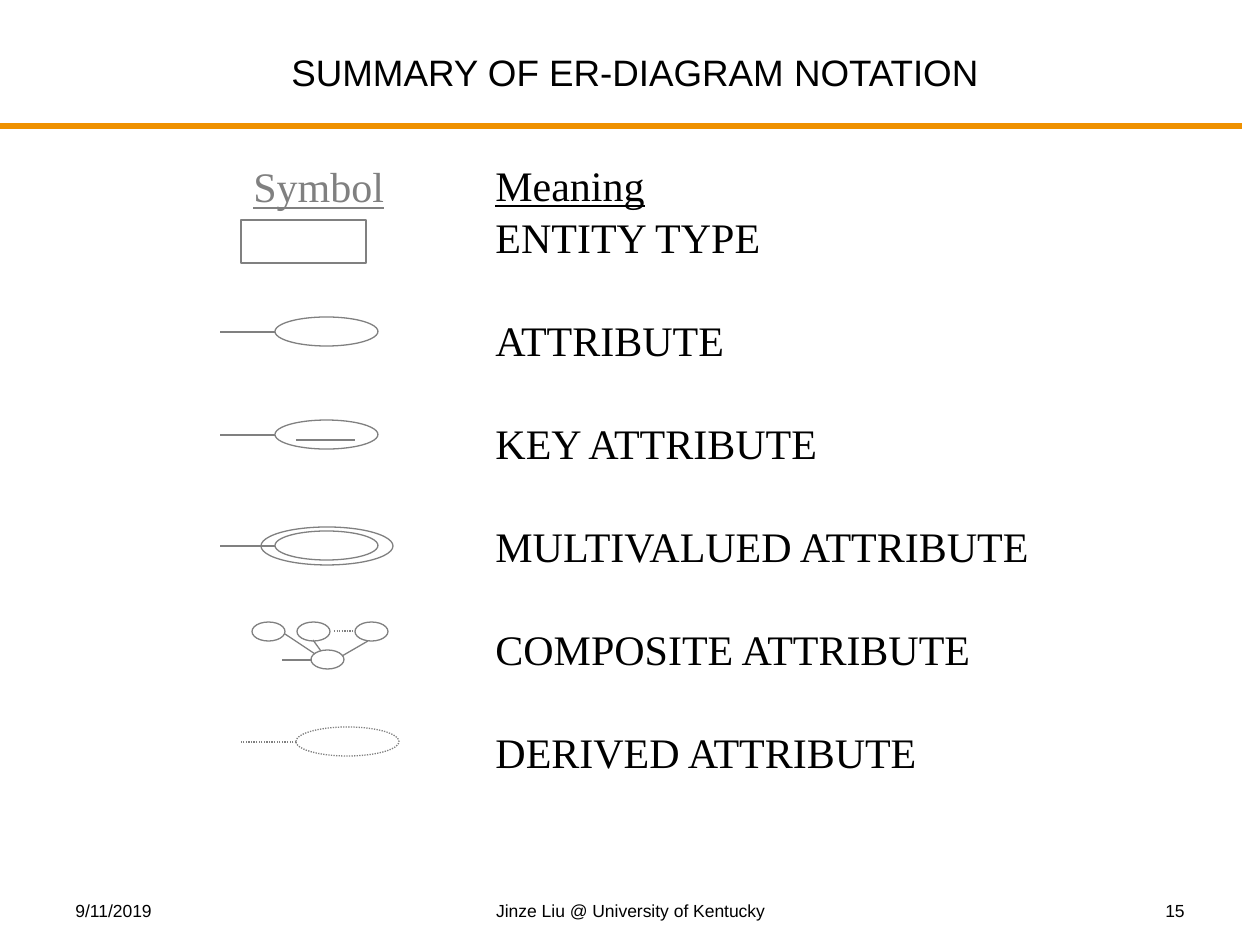
from dataclasses import dataclass

from lxml.etree import SubElement
from pptx import Presentation
from pptx.dml.color import RGBColor
from pptx.enum.dml import MSO_LINE
from pptx.enum.shapes import MSO_CONNECTOR, MSO_SHAPE
from pptx.enum.text import MSO_ANCHOR, MSO_AUTO_SIZE, PP_ALIGN
from pptx.oxml.ns import qn
from pptx.util import Pt

EMU_PER_PX = 914400 / 126
COLORS = {"text": "000000", "symbol": "808080", "rule": "EF9100"}
SANS, SERIF = "Arial", "Times New Roman"
OVAL_W, OVAL_H, STEM = 103, 29, 55
SMALL_W, SMALL_H = 33, 19


@dataclass
class Oval:
    left: int
    top: int
    width: int = OVAL_W
    height: int = OVAL_H
    dotted: bool = False


@dataclass
class Line:
    x1: int
    y1: int
    x2: int
    y2: int
    dotted: bool = False


@dataclass
class Label:
    text: str
    left: int
    top: int
    width: int
    height: int
    align: PP_ALIGN


def px(value: int) -> int:
    return round(value * EMU_PER_PX)


def rgb(name: str) -> RGBColor:
    return RGBColor.from_string(COLORS[name])


def style_line(line, color: str = "symbol", width: float = 0.75, dotted: bool = False) -> None:
    line.color.rgb = rgb(color)
    line.width = Pt(width)
    if dotted:
        line.dash_style = MSO_LINE.ROUND_DOT


def draw_outline(shapes, kind: MSO_SHAPE, o: Oval) -> None:
    s = shapes.add_shape(kind, px(o.left), px(o.top), px(o.width), px(o.height))
    s.shadow.inherit = False
    s.fill.background()
    style_line(s.line, dotted=o.dotted)


def draw_line(shapes, ln: Line, color: str = "symbol", width: float = 0.75) -> None:
    s = shapes.add_connector(MSO_CONNECTOR.STRAIGHT, px(ln.x1), px(ln.y1), px(ln.x2), px(ln.y2))
    style_line(s.line, color, width, ln.dotted)
    SubElement(s._element.spPr, qn("a:effectLst"))


def draw_symbol(shapes, parts: list) -> None:
    group = shapes.add_group_shape()
    for part in parts:
        if isinstance(part, Oval):
            draw_outline(group.shapes, MSO_SHAPE.OVAL, part)
        else:
            draw_line(group.shapes, part)


def attribute(left: int, top: int, dotted: bool = False) -> list:
    """An oval with a stem leaving its left side."""
    y = top + OVAL_H // 2 + 1
    return [Oval(left, top, dotted=dotted), Line(left, y, left - STEM, y, dotted)]


def format_paragraph(p, font: str, size: float, color: str = "text", underline: bool = False) -> None:
    for r in p.runs:
        r.font.name = font
        r.font.size = Pt(size)
        r.font.color.rgb = rgb(color)
        r.font.underline = underline


def add_text(shapes, label: Label):
    tf = shapes.add_textbox(px(label.left), px(label.top), px(label.width), px(label.height)).text_frame
    tf.word_wrap = True
    tf.text = label.text
    tf.paragraphs[0].alignment = label.align
    return tf


FOOTERS = [
    Label("9/11/2019", 63, 894, 294, 31, PP_ALIGN.LEFT),
    Label("Jinze Liu @ University of Kentucky", 431, 894, 399, 31, PP_ALIGN.CENTER),
    Label("15", 903, 894, 294, 31, PP_ALIGN.RIGHT),
]
MEANINGS = ["ENTITY TYPE", "ATTRIBUTE", "KEY ATTRIBUTE", "MULTIVALUED ATTRIBUTE",
            "COMPOSITE ATTRIBUTE", "DERIVED ATTRIBUTE"]
SYMBOLS = [
    attribute(275, 317),
    attribute(275, 420) + [Line(296, 440, 355, 440)],
    attribute(275, 531) + [Oval(261, 527, 132, 38)],
    [Oval(x, y, SMALL_W, SMALL_H) for x, y in ((252, 622), (297, 622), (355, 622), (311, 650))]
    + [Line(312, 660, 282, 660), Line(285, 634, 315, 654), Line(313, 640, 321, 651),
       Line(342, 656, 368, 641), Line(334, 631, 354, 631, dotted=True)],
    attribute(296, 727, dotted=True),
]


def main() -> None:
    prs = Presentation()
    prs.slide_width, prs.slide_height = px(1260), px(945)
    slide = prs.slides.add_slide(prs.slide_layouts[5])
    shapes = slide.shapes

    # Title and the rule under it
    title = shapes.title
    title.left, title.top, title.width, title.height = px(10), px(50), px(1250), px(50)
    tf = title.text_frame
    tf.text = "SUMMARY OF ER-DIAGRAM NOTATION"
    tf.auto_size = MSO_AUTO_SIZE.NONE
    tf.vertical_anchor = MSO_ANCHOR.MIDDLE
    tf.margin_top, tf.margin_bottom = 0, px(6)
    tf.paragraphs[0].alignment = PP_ALIGN.CENTER
    format_paragraph(tf.paragraphs[0], SANS, 21)
    draw_line(shapes, Line(0, 126, 1242, 126), "rule", 3)

    # Footer
    for label in FOOTERS:
        format_paragraph(add_text(shapes, label).paragraphs[0], SANS, 10)

    # Meaning column
    tf = add_text(shapes, Label("Meaning", 483, 153, 609, 616, PP_ALIGN.LEFT))
    format_paragraph(tf.paragraphs[0], SERIF, 24, underline=True)
    for i, meaning in enumerate(MEANINGS):
        p = tf.add_paragraph()
        p.text = meaning
        p.space_before = Pt(30 if i else 1.2)
        format_paragraph(p, SERIF, 24)

    # Symbol column
    tf = add_text(shapes, Label("Symbol", 241, 161, 157, 50, PP_ALIGN.LEFT))
    tf.word_wrap = False
    tf.margin_top = tf.margin_bottom = 0
    format_paragraph(tf.paragraphs[0], SERIF, 24, "symbol", underline=True)
    draw_outline(shapes, MSO_SHAPE.RECTANGLE, Oval(241, 220, 125, 43))
    for parts in SYMBOLS:
        draw_symbol(shapes, parts)

    prs.save("out.pptx")


if __name__ == "__main__":
    main()
